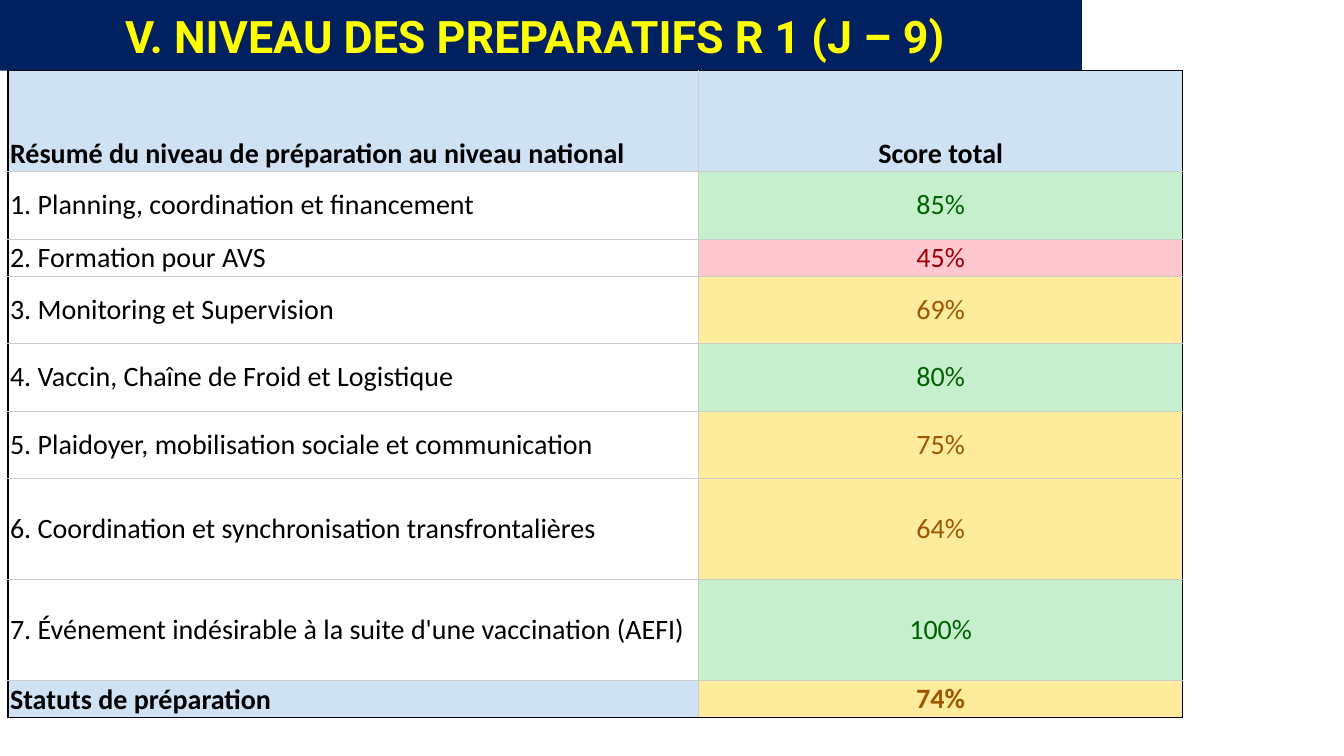
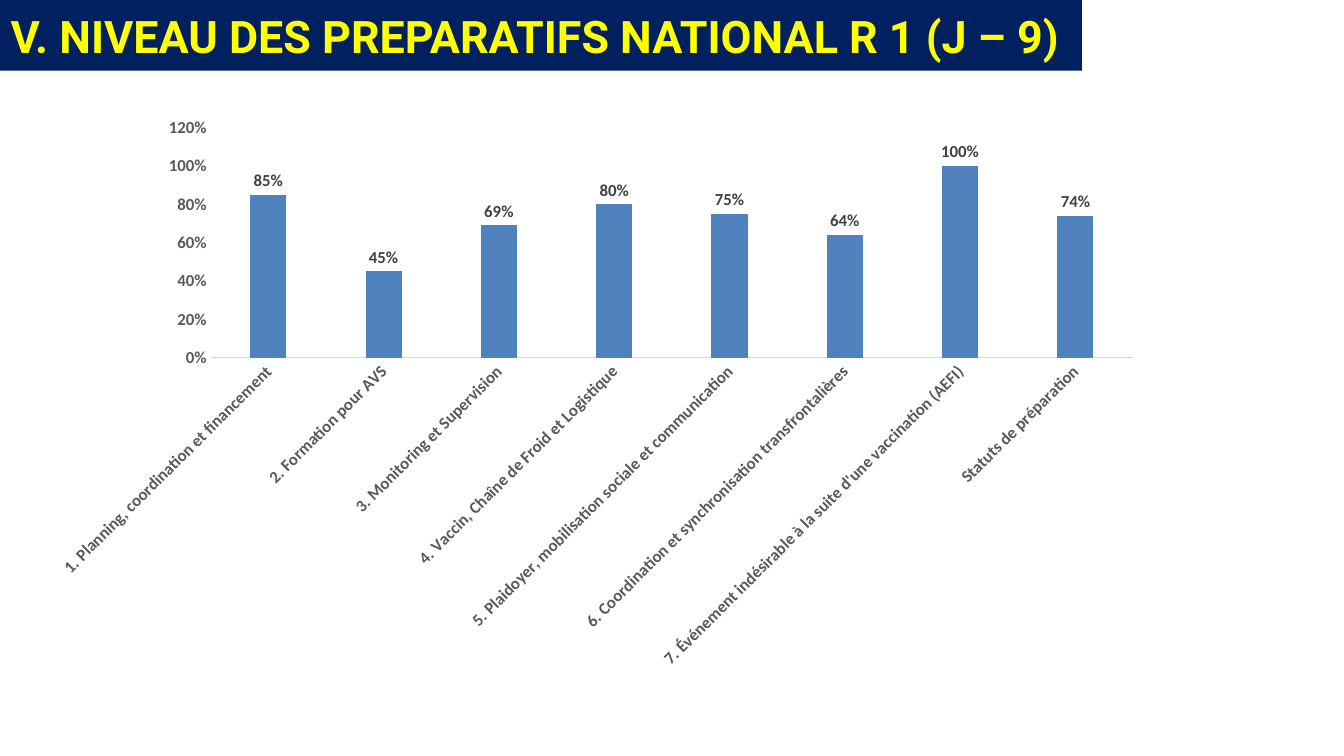
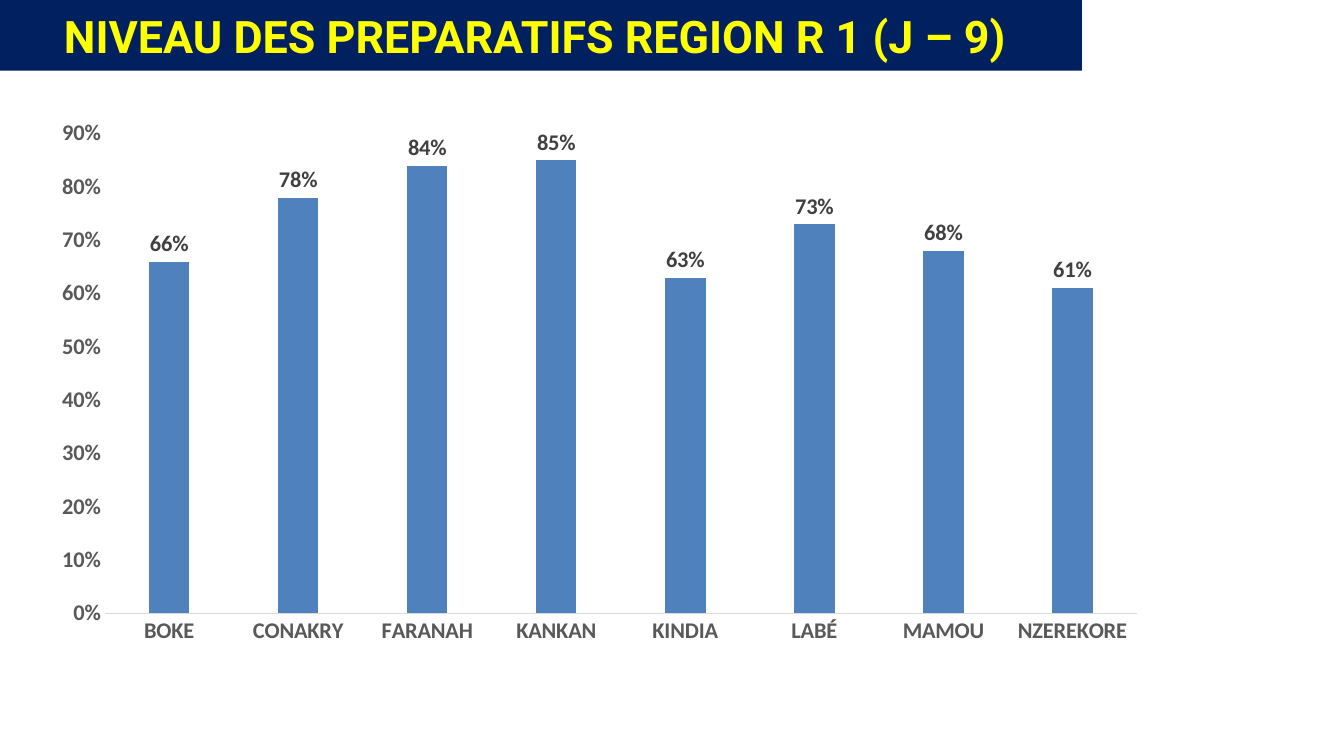
from lxml.etree import SubElement
from pptx import Presentation
from pptx.chart.data import CategoryChartData
from pptx.dml.color import RGBColor
from pptx.enum.chart import XL_CHART_TYPE, XL_LABEL_POSITION, XL_TICK_MARK
from pptx.enum.text import MSO_ANCHOR, MSO_AUTO_SIZE, PP_ALIGN
from pptx.oxml import parse_xml
from pptx.oxml.ns import nsdecls, qn
from pptx.util import Inches, Pt

COLORS = {
    "band": "002060", "title": "FFFF00", "header": "CFE2F3", "text": "000000",
    "outline": "000000", "grid": "CCCCCC", "bar": "4F81BD", "axis_text": "595959",
    "axis_line": "D9D9D9", "label": "404040",
}
LEVELS = [
    (0.8, "C6EFCE", "006100"),
    (0.6, "FFEB9C", "9C5700"),
    (0, "FFC7CE", "9C0006"),
]
TITLES = [
    "V. NIVEAU DES PREPARATIFS R 1 (J – 9) ",
    "V. NIVEAU DES PREPARATIFS NATIONAL R 1 (J – 9) ",
    "NIVEAU DES PREPARATIFS REGION R 1 (J – 9) ",
]
TABLE_HEADER = ("Résumé du niveau de préparation au niveau national", "Score total")
NATIONAL = [
    ("1. Planning, coordination et financement", 0.85),
    ("2. Formation pour AVS", 0.45),
    ("3. Monitoring et Supervision", 0.69),
    ("4. Vaccin, Chaîne de Froid et Logistique", 0.80),
    ("5. Plaidoyer, mobilisation sociale et communication", 0.75),
    ("6. Coordination et synchronisation transfrontalières", 0.64),
    ("7. Événement indésirable à la suite d'une vaccination (AEFI)", 1.00),
    ("Statuts de préparation", 0.74),
]
REGIONS = [
    ("BOKE", 0.66), ("CONAKRY", 0.78), ("FARANAH", 0.84), ("KANKAN", 0.85),
    ("KINDIA", 0.63), ("LABÉ", 0.73), ("MAMOU", 0.68), ("NZEREKORE", 0.61),
]
COLUMN_WIDTHS = (6.85, 4.8)
ROW_HEIGHTS = (1, 0.67, 0.37, 0.67, 0.67, 0.67, 1, 1, 0.37)
CHARTS = [
    {"title": TITLES[1], "scores": NATIONAL, "box": (0.37, 1.04, 11.09, 5.7), "size": 12,
     "maximum": 1.2, "step": 0.2, "angle": -45, "plot": (0.155, 0.04, 0.825, 0.4)},
    {"title": TITLES[2], "scores": REGIONS, "box": (0.37, 1.11, 11.13, 5.41), "size": 16,
     "maximum": 0.9, "step": 0.1, "angle": 0, "plot": (0.06, 0.04, 0.92, 0.88)},
]


def rgb(value):
    return RGBColor.from_string(value)


def style_font(font, name, size, color, bold):
    font.name, font.size, font.bold = name, Pt(size), bold
    font.color.rgb = rgb(color)


def add_page(deck, title):
    page = deck.slides.add_slide(deck.slide_layouts[5])
    band = page.shapes.title
    band.left, band.top = Inches(0), Inches(0)
    band.width, band.height = Inches(10.73), Inches(0.7)
    band.fill.solid()
    band.fill.fore_color.rgb = rgb(COLORS["band"])
    frame = band.text_frame
    frame.auto_size = MSO_AUTO_SIZE.NONE
    frame.word_wrap = True
    frame.vertical_anchor = MSO_ANCHOR.MIDDLE
    para = frame.paragraphs[0]
    para.alignment = PP_ALIGN.CENTER
    span = para.add_run()
    span.text = title
    style_font(span.font, "Roboto", 32, COLORS["title"], True)
    return page


def set_borders(cell, outer_sides):
    properties = cell._tc.get_or_add_tcPr()
    for side in "LRTB":
        color, width = (COLORS["outline"], 1) if side in outer_sides else (COLORS["grid"], 0.5)
        line = SubElement(properties, qn(f"a:ln{side}"), w=str(Pt(width)))
        fill = SubElement(line, qn("a:solidFill"))
        SubElement(fill, qn("a:srgbClr"), val=color)


def fill_cell(cell, text, color, fill, bold, centred, anchor, outer_sides):
    set_borders(cell, outer_sides)
    if fill:
        cell.fill.solid()
        cell.fill.fore_color.rgb = rgb(fill)
    else:
        cell.fill.background()
    cell.margin_left = cell.margin_right = Inches(0.02)
    cell.margin_top = cell.margin_bottom = Inches(0)
    cell.vertical_anchor = anchor
    para = cell.text_frame.paragraphs[0]
    para.alignment = PP_ALIGN.CENTER if centred else PP_ALIGN.LEFT
    span = para.add_run()
    span.text = text
    style_font(span.font, "Calibri", 20, color, bold)


def add_score_table(page):
    last = len(NATIONAL)
    frame = page.shapes.add_table(
        last + 1, 2, Inches(0.08), Inches(0.7),
        Inches(sum(COLUMN_WIDTHS)), Inches(sum(ROW_HEIGHTS)))
    table = frame.table
    table.first_row = table.horz_banding = False
    for column, width in zip(table.columns, COLUMN_WIDTHS):
        column.width = Inches(width)
    for row, height in zip(table.rows, ROW_HEIGHTS):
        row.height = Inches(height)
    for index, (name, score) in enumerate([TABLE_HEADER] + NATIONAL):
        emphasis = index in (0, last)
        edge = {0: "T", last: "B"}.get(index, "")
        name_fill = COLORS["header"] if emphasis else None
        name_anchor = MSO_ANCHOR.BOTTOM if emphasis else MSO_ANCHOR.MIDDLE
        if index == 0:
            score_text, score_fill, score_color = score, COLORS["header"], COLORS["text"]
        else:
            score_text = f"{score:.0%}"
            score_fill, score_color = next(level[1:] for level in LEVELS if score >= level[0])
        score_anchor = MSO_ANCHOR.BOTTOM if index == 0 else MSO_ANCHOR.MIDDLE
        fill_cell(table.cell(index, 0), name, COLORS["text"], name_fill,
                  emphasis, False, name_anchor, "L" + edge)
        fill_cell(table.cell(index, 1), score_text, score_color, score_fill,
                  emphasis, True, score_anchor, "R" + edge)


def place_plot(chart, plot):
    area = chart._chartSpace.chart.plotArea
    for layout in area.findall(qn("c:layout")):
        area.remove(layout)
    sizes = "".join(f'<c:{key} val="{value}"/>' for key, value in zip("xywh", plot))
    area.insert(0, parse_xml(
        f'<c:layout {nsdecls("c")}><c:manualLayout><c:layoutTarget val="inner"/>'
        f'<c:xMode val="edge"/><c:yMode val="edge"/>{sizes}</c:manualLayout></c:layout>'))


def add_score_chart(page, design):
    data = CategoryChartData(number_format="0%")
    names, scores = zip(*design["scores"])
    data.categories = names
    data.add_series("Series 1", scores)
    box = [Inches(length) for length in design["box"]]
    chart = page.shapes.add_chart(XL_CHART_TYPE.COLUMN_CLUSTERED, *box, data).chart
    chart.has_title = chart.has_legend = False
    size = design["size"]
    style_font(chart.font, "Calibri", size, COLORS["text"], True)
    place_plot(chart, design["plot"])

    categories, values = chart.category_axis, chart.value_axis
    for axis in (categories, values):
        axis.has_major_gridlines = False
        axis.major_tick_mark = axis.minor_tick_mark = XL_TICK_MARK.NONE
        style_font(axis.tick_labels.font, "Calibri", size, COLORS["axis_text"], True)
    categories.format.line.color.rgb = rgb(COLORS["axis_line"])
    categories.format.line.width = Pt(0.75)
    label_body = categories._element.find(qn("c:txPr")).find(qn("a:bodyPr"))
    label_body.set("rot", str(design["angle"] * 60000))
    values.format.line.fill.background()
    values.minimum_scale, values.maximum_scale = 0, design["maximum"]
    values.major_unit = design["step"]
    values.tick_labels.number_format = "0%"
    values.tick_labels.number_format_is_linked = False

    plot = chart.plots[0]
    plot.vary_by_categories = False
    plot.gap_width, plot.overlap = 219, -27
    bars = plot.series[0].format.fill
    bars.solid()
    bars.fore_color.rgb = rgb(COLORS["bar"])
    plot.has_data_labels = True
    labels = plot.data_labels
    labels.show_value = True
    labels.position = XL_LABEL_POSITION.OUTSIDE_END
    labels.number_format = "0%"
    labels.number_format_is_linked = False
    style_font(labels.font, "Calibri", size, COLORS["label"], True)


def main():
    deck = Presentation()
    deck.slide_width, deck.slide_height = Inches(13.33), Inches(7.5)
    add_score_table(add_page(deck, TITLES[0]))
    for design in CHARTS:
        add_score_chart(add_page(deck, design["title"]), design)
    deck.save("out.pptx")


if __name__ == "__main__":
    main()
